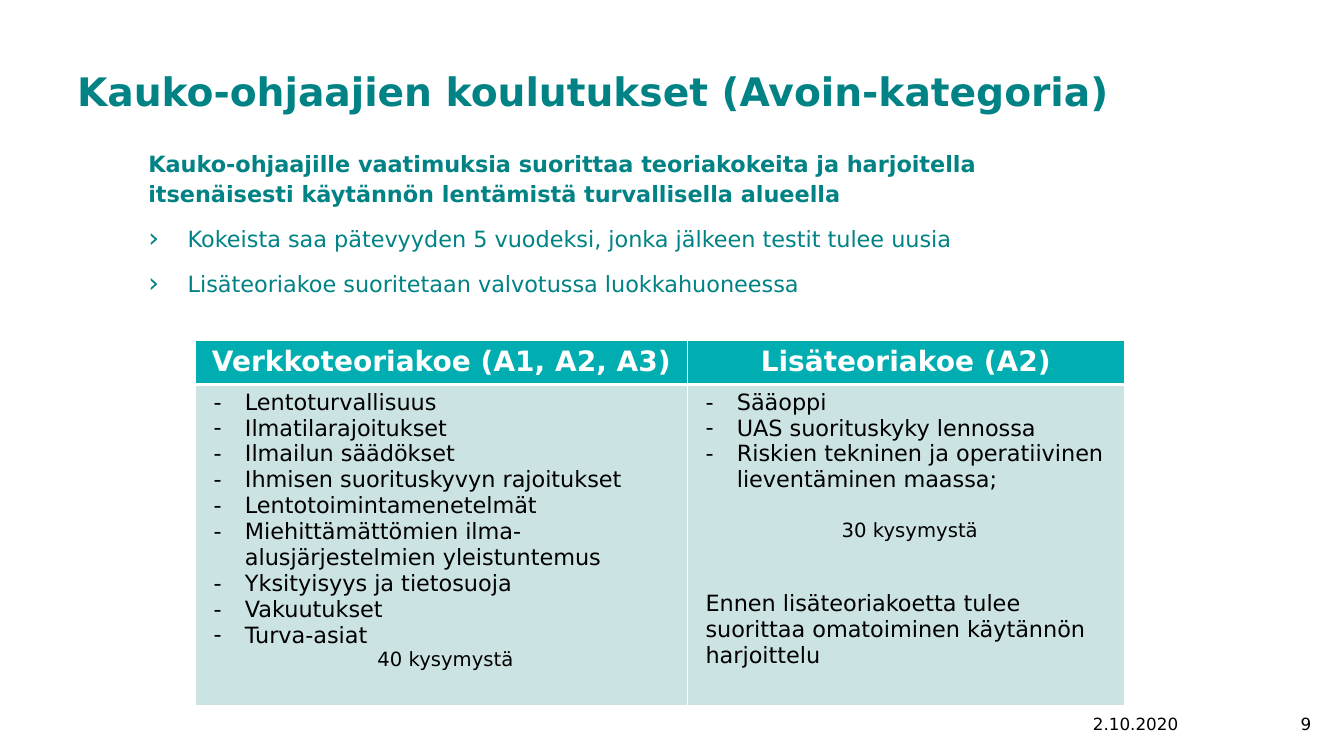
from lxml import etree
from pptx import Presentation
from pptx import util as u
from pptx.dml.color import RGBColor
from pptx.enum import text
from pptx.oxml import ns

TEAL = RGBColor(0x01, 0x82, 0x85)
HEADER_TEAL = RGBColor(0x00, 0xAE, 0xB2)
PALE_TEAL = RGBColor(0xCC, 0xE3, 0xE4)
WHITE = RGBColor(0xFF, 0xFF, 0xFF)
BLACK = RGBColor(0x00, 0x00, 0x00)
CENTER, RIGHT = text.PP_ALIGN.CENTER, text.PP_ALIGN.RIGHT


def add_element(parent, tag, **attributes):
    element = etree.SubElement(parent, ns.qn(tag))
    for name, value in attributes.items():
        element.set(name, str(value))
    return element


class SlideBuilder:
    """Holds the style and the current slide; lengths are percent of its size."""
    font = "DejaVu Sans"

    def __init__(self, deck):
        self.deck = deck
        self.page = deck.slides.add_slide(deck.slide_layouts[6])

    def across(self, share):
        return int(self.deck.slide_width * share / 100)

    def down(self, share):
        return int(self.deck.slide_height * share / 100)

    def place(self, left, top, width, height):
        return self.across(left), self.down(top), self.across(width), self.down(height)

    def bullet(self, para, mark, color=None, percent=None):
        properties = para._p.get_or_add_pPr()
        if color is not None:
            add_element(add_element(properties, "a:buClr"), "a:srgbClr", val=color)
        if percent:
            add_element(properties, "a:buSzPct", val=percent * 1000)
        add_element(properties, "a:buFont", typeface=self.font)
        add_element(properties, "a:buChar", char=mark)

    def fill_text(self, frame, lines, size, color, bold=False, align=None, spacing=None,
                  after=None):
        """Put lines of (words, overrides) into a text frame."""
        for index, (words, options) in enumerate(lines):
            para = frame.paragraphs[0] if index == 0 else frame.add_paragraph()
            if "bullet" in options:
                self.bullet(para, *options["bullet"])
            if "indent" in options:
                left, first = options["indent"]
                properties = para._p.get_or_add_pPr()
                properties.set("marL", str(u.Inches(left)))
                properties.set("indent", str(u.Inches(first)))
            para.alignment = options.get("align", align)
            para.line_spacing = spacing
            if after:
                para.space_after = u.Pt(after)
            if "before" in options:
                para.space_before = u.Pt(options["before"])
            span = para.add_run()
            span.text = words
            span.font.name = self.font
            span.font.size = u.Pt(options.get("size", size))
            span.font.bold = options.get("bold", bold)
            span.font.color.rgb = color

    def textbox(self, area, lines, anchor=text.MSO_ANCHOR.TOP, **style):
        frame = self.page.shapes.add_textbox(*self.place(*area)).text_frame
        frame.word_wrap = True
        frame.vertical_anchor = anchor
        self.fill_text(frame, lines, **style)

    def border(self, cell, **widths):
        properties = cell._tc.get_or_add_tcPr()
        for side in "LRTB":
            line = add_element(properties, f"a:ln{side}", w=u.Pt(widths.get(side, 1)))
            add_element(add_element(line, "a:solidFill"), "a:srgbClr", val=WHITE)

    def table(self, left, top, columns, heights, headers, bodies):
        area = self.place(left, top, sum(columns), sum(heights))
        table = self.page.shapes.add_table(2, len(columns), *area).table
        table.horz_banding = False
        for row, height in zip(table.rows, heights):
            row.height = self.down(height)
        for index, width in enumerate(columns):
            table.columns[index].width = self.across(width)
            header, body = table.cell(0, index), table.cell(1, index)
            self.border(header, B=3)
            self.border(body, T=3)
            for cell, color in ((header, HEADER_TEAL), (body, PALE_TEAL)):
                cell.fill.solid()
                cell.fill.fore_color.rgb = color
            self.fill_text(header.text_frame, [(headers[index], {})], 20, WHITE,
                           bold=True, align=CENTER)
            self.fill_text(body.text_frame, bodies[index], 16, BLACK)


def dashed(*topics):
    return [(topic, {"bullet": ("-",), "indent": (0.39, -0.31)}) for topic in topics]


def question_count(words, **options):
    return words, {"size": 14, "align": CENTER, "indent": (0.08, 0), **options}


def main():
    deck = Presentation()
    deck.slide_width, deck.slide_height = u.Inches(13.33), u.Inches(7.5)
    slide = SlideBuilder(deck)

    slide.textbox((5, 8.9, 88.1, 16.1),
                  [("Kauko-ohjaajien koulutukset (Avoin-kategoria)", {})],
                  size=28, color=TEAL, bold=True, spacing=0.9)

    arrow = {"bullet": ("›", TEAL, 120), "indent": (0.39, -0.39)}
    slide.textbox((10.3, 18.7, 68.3, 26.3), [
        ("Kauko-ohjaajille vaatimuksia suorittaa teoriakokeita ja harjoitella "
         "itsenäisesti käytännön lentämistä turvallisella alueella", {"bold": True}),
        ("Kokeista saa pätevyyden 5 vuodeksi, jonka jälkeen testit tulee uusia", arrow),
        ("Lisäteoriakoe suoritetaan valvotussa luokkahuoneessa", arrow),
    ], size=16, color=TEAL, spacing=1.14, after=10)

    online_exam = dashed(
        "Lentoturvallisuus", "Ilmatilarajoitukset", "Ilmailun säädökset",
        "Ihmisen suorituskyvyn rajoitukset", "Lentotoimintamenetelmät",
        "Miehittämättömien ilma-alusjärjestelmien yleistuntemus",
        "Yksityisyys ja tietosuoja", "Vakuutukset", "Turva-asiat",
    ) + [question_count("40 kysymystä")]
    extra_exam = dashed(
        "Sääoppi", "UAS suorituskyky lennossa",
        "Riskien tekninen ja operatiivinen lieventäminen maassa;",
    ) + [
        question_count("30 kysymystä", before=18.6),
        ("Ennen lisäteoriakoetta tulee suorittaa omatoiminen käytännön harjoittelu",
         {"indent": (0.08, 0), "before": 35}),
    ]
    slide.table(14.55, 45.07, columns=(36.6, 32.5), heights=(5.47, 42.53),
                headers=("Verkkoteoriakoe (A1, A2, A3)", "Lisäteoriakoe (A2)"),
                bodies=(online_exam, extra_exam))

    for left, width, words, align in ((76.8, 15.4, "2.10.2020", CENTER),
                                      (92.7, 5.6, "9", RIGHT)):
        slide.textbox((left, 93.9, width, 3.7), [(words, {})], size=12, color=BLACK,
                      align=align, anchor=text.MSO_ANCHOR.MIDDLE)

    deck.save("out.pptx")


if __name__ == "__main__":
    main()
